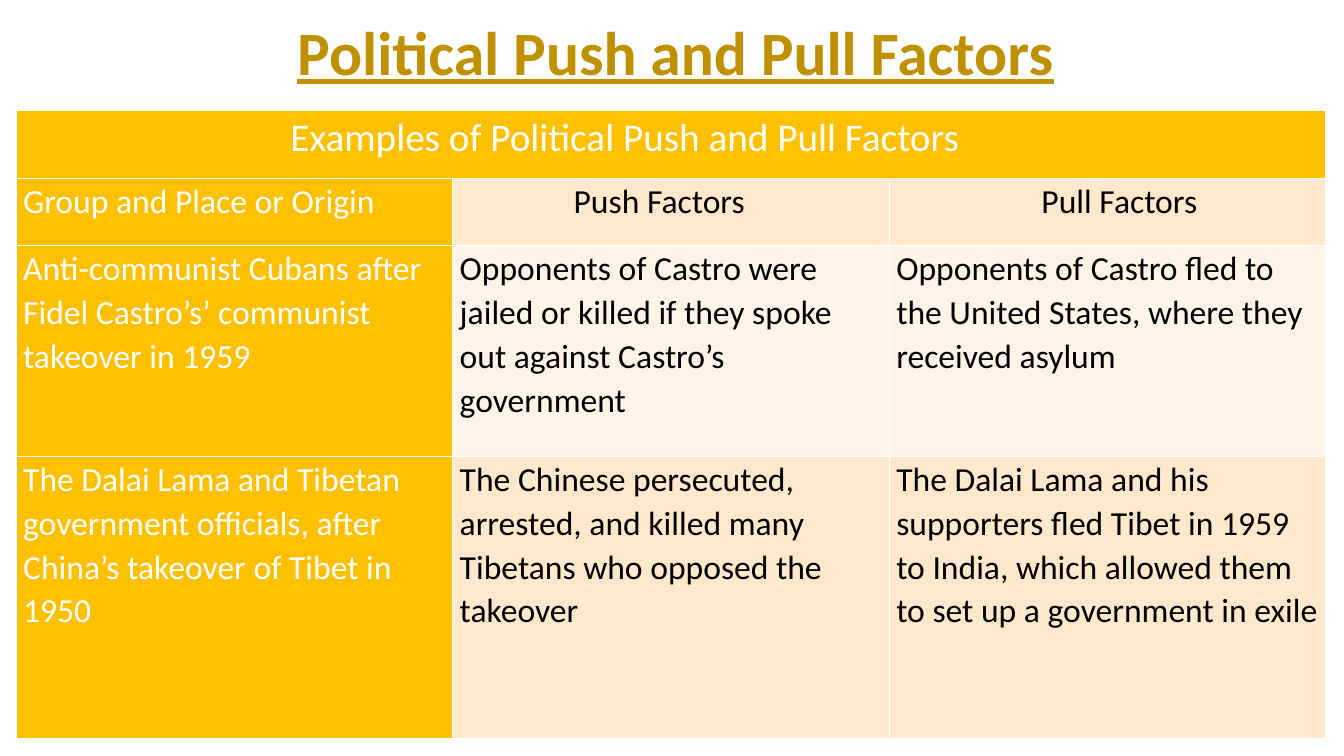
from lxml import etree
from pptx import Presentation
from pptx.dml.color import RGBColor
from pptx.enum.text import MSO_ANCHOR
from pptx.oxml.ns import qn
from pptx.util import Inches, Pt

TITLE = "Political Push and Pull Factors"
BANNER = "Examples of Political Push and Pull Factors"
ROWS = [
    (BANNER, "", ""),
    ("Group and Place or Origin", "Push Factors", "Pull Factors"),
    (
        "Anti-communist Cubans after Fidel Castro’s’ communist takeover in 1959",
        "Opponents of Castro were jailed or killed if they spoke out against Castro’s government",
        "Opponents of Castro fled to the United States, where they received asylum",
    ),
    (
        "The Dalai Lama and Tibetan government officials, after China’s takeover of Tibet in 1950",
        "The Chinese persecuted, arrested, and killed many Tibetans who opposed the takeover",
        "The Dalai Lama and his supporters fled Tibet in 1959 to India, "
        "which allowed them to set up a government in exile",
    ),
]
INDENTS = {TITLE: 1.94, BANNER: 2.65, "Push Factors": 1.13, "Pull Factors": 1.44}
ROW_HEIGHTS = (0.67, 0.67, 2.09, 2.8)
COLUMN_WIDTH = 4.33

FONT = "Calibri"
WHITE = RGBColor(0xFF, 0xFF, 0xFF)
BLACK = RGBColor(0x00, 0x00, 0x00)
DARK_GOLD = RGBColor(0xBF, 0x90, 0x00)
GOLD = RGBColor(0xFF, 0xC0, 0x00)
PEACH = RGBColor(0xFF, 0xE8, 0xCC)
PALE_PEACH = RGBColor(0xFF, 0xF4, 0xE7)
MIDDLE = MSO_ANCHOR.MIDDLE


def write(frame, text, size, color, spacing):
    paragraph = frame.paragraphs[0]
    paragraph.line_spacing = spacing
    if text in INDENTS:
        properties = paragraph._p.get_or_add_pPr()
        properties.set("marL", str(Inches(INDENTS[text])))
        properties.set("indent", "0")
    run = paragraph.add_run()
    run.text = text
    run.font.name = FONT
    run.font.size = Pt(size)
    run.font.color.rgb = color
    return run


def add_borders(cell):
    properties = cell._tc.get_or_add_tcPr()
    for side in ("lnL", "lnR", "lnT", "lnB"):
        line = etree.SubElement(properties, qn(f"a:{side}"), w=str(Pt(1)))
        fill = etree.SubElement(line, qn("a:solidFill"))
        etree.SubElement(fill, qn("a:srgbClr"), val=str(WHITE))


def add_title(slide):
    title = slide.shapes.add_textbox(Inches(0.91), Inches(0.13), Inches(12.13), Inches(0.84))
    frame = title.text_frame
    frame.word_wrap = True
    frame.vertical_anchor = MIDDLE
    run = write(frame, TITLE, 44, DARK_GOLD, 0.9)
    run.font.bold = True
    run.font.underline = True


def add_factors(slide):
    columns = len(ROWS[0])
    factors = slide.shapes.add_table(
        len(ROWS), columns, Inches(0.16), Inches(1.1),
        Inches(COLUMN_WIDTH * columns), Inches(sum(ROW_HEIGHTS)),
    ).table
    for column in factors.columns:
        column.width = Inches(COLUMN_WIDTH)
    for row, height in zip(factors.rows, ROW_HEIGHTS):
        row.height = Inches(height)

    for r, texts in enumerate(ROWS):
        for c, text in enumerate(texts):
            cell = factors.cell(r, c)
            is_header = r == 0 or c == 0
            cell.margin_left = cell.margin_right = Inches(0.07)
            cell.margin_top = cell.margin_bottom = 0
            add_borders(cell)
            cell.fill.solid()
            cell.fill.fore_color.rgb = GOLD if is_header else PEACH if r % 2 else PALE_PEACH
            if r == len(ROWS) - 1 and not is_header:
                cell.fill.fore_color.rgb = PEACH
            if text:
                write(cell.text_frame, text, 28 if r == 0 else 24, WHITE if is_header else BLACK, 1.07)
    factors.cell(0, 0).merge(factors.cell(0, columns - 1))


def main():
    deck = Presentation()
    deck.slide_width, deck.slide_height = Inches(13.33), Inches(7.5)
    slide = deck.slides.add_slide(deck.slide_layouts[6])
    add_title(slide)
    add_factors(slide)
    deck.save("out.pptx")


if __name__ == "__main__":
    main()
